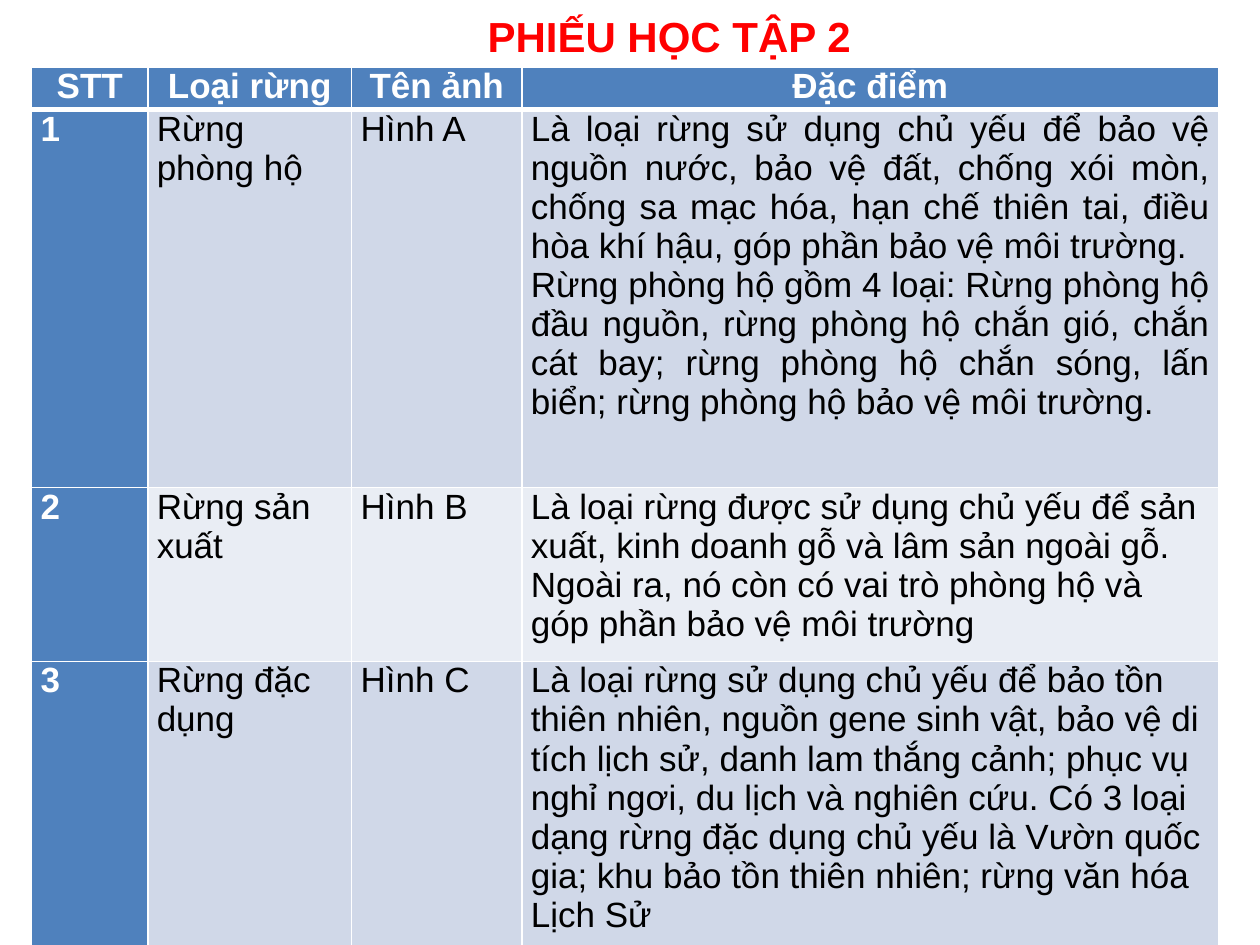
from lxml.etree import SubElement
from pptx import Presentation
from pptx.dml.color import RGBColor
from pptx.enum.text import MSO_ANCHOR, PP_ALIGN
from pptx.oxml.ns import qn
from pptx.util import Cm, Pt

RED = RGBColor(0xFF, 0x00, 0x00)
WHITE = RGBColor(0xFF, 0xFF, 0xFF)
BLACK = RGBColor(0x00, 0x00, 0x00)
BLUE = RGBColor(0x4F, 0x81, 0xBD)
BAND_DARK = RGBColor(0xD0, 0xD8, 0xE8)
BAND_LIGHT = RGBColor(0xE9, 0xED, 0xF4)

COLUMN_WIDTHS = (2.34, 4.11, 3.43, 14.05)
ROW_HEIGHTS = (0.86, 7.62, 3.5, 5.69)
FOREST_ROWS = (
    ("STT", "Loại rừng", "Tên ảnh", "Đặc điểm"),
    ("1", "Rừng phòng hộ", "Hình A",
     "Là loại rừng sử dụng chủ yếu để bảo vệ nguồn nước, bảo vệ đất, "
     "chống xói mòn, chống sa mạc hóa, hạn chế thiên tai, điều hòa khí hậu, "
     "góp phần bảo vệ môi trường.\n"
     "Rừng phòng hộ gồm 4 loại: Rừng phòng hộ đầu nguồn, rừng phòng hộ "
     "chắn gió, chắn cát bay; rừng phòng hộ chắn sóng, lấn biển; "
     "rừng phòng hộ bảo vệ môi trường."),
    ("2", "Rừng sản xuất", "Hình B",
     "Là loại rừng được sử dụng chủ yếu để sản xuất, kinh doanh gỗ và lâm sản "
     "ngoài gỗ. Ngoài ra, nó còn có vai trò phòng hộ và góp phần bảo vệ "
     "môi trường"),
    ("3", "Rừng đặc dụng", "Hình C",
     "Là loại rừng sử dụng chủ yếu để bảo tồn thiên nhiên, nguồn gene sinh vật, "
     "bảo vệ di tích lịch sử, danh lam thắng cảnh; phục vụ nghỉ ngơi, du lịch "
     "và nghiên cứu. Có 3 loại dạng rừng đặc dụng chủ yếu là Vườn quốc gia; "
     "khu bảo tồn thiên nhiên; rừng văn hóa Lịch Sử"),
)


def style_paragraph(para, size, color, bold, align=None):
    """Set the font and alignment of one paragraph."""
    para.font.name = "Arial"
    para.font.size = Pt(size)
    para.font.bold = bold
    para.font.color.rgb = color
    para.alignment = align


def set_borders(cell, **widths):
    """Draw white borders, given in points by side letter."""
    properties = cell._tc.get_or_add_tcPr()
    for side, width in widths.items():
        line = SubElement(properties, qn(f"a:ln{side}"), w=str(Pt(width)))
        fill = SubElement(line, qn("a:solidFill"))
        SubElement(fill, qn("a:srgbClr"), val=str(WHITE))


def add_title(page, left, top, width, height):
    """Add the worksheet title, indented within its box."""
    box = page.shapes.add_textbox(Cm(left), Cm(top), Cm(width), Cm(height))
    frame = box.text_frame
    frame.word_wrap = True
    frame.vertical_anchor = MSO_ANCHOR.MIDDLE
    frame.margin_left = Cm(9.45)
    frame.text = "PHIẾU HỌC TẬP 2"
    style_paragraph(frame.paragraphs[0], 24, RED, True)


def fill_cell(cell, text, row, column):
    """Write and style one cell according to its place in the table."""
    header = row == 0
    strong = header or column == 0
    cell.margin_left = cell.margin_right = Cm(0.18)
    cell.margin_top = cell.margin_bottom = 0
    set_borders(cell, L=1, R=1, T=3 if row == 1 else 1, B=3 if header else 1)
    cell.fill.solid()
    band = BAND_DARK if row % 2 else BAND_LIGHT
    cell.fill.fore_color.rgb = BLUE if strong else band
    cell.text = text
    align = PP_ALIGN.CENTER if header else None
    if (row, column) == (1, 3):
        align = PP_ALIGN.JUSTIFY
    for para in cell.text_frame.paragraphs:
        style_paragraph(para, 20, WHITE if strong else BLACK, strong, align)


def add_forest_table(page, left, top):
    """Add the table of forest types."""
    frame = page.shapes.add_table(
        len(ROW_HEIGHTS), len(COLUMN_WIDTHS), Cm(left), Cm(top),
        Cm(sum(COLUMN_WIDTHS)), Cm(sum(ROW_HEIGHTS)))
    table = frame.table
    table.first_col = True
    for column, width in zip(table.columns, COLUMN_WIDTHS):
        column.width = Cm(width)
    for row, height in zip(table.rows, ROW_HEIGHTS):
        row.height = Cm(height)
    for row, texts in enumerate(FOREST_ROWS):
        for column, text in enumerate(texts):
            fill_cell(table.cell(row, column), text, row, column)


def main():
    """Build the worksheet slide and save it."""
    deck = Presentation()
    deck.slide_width, deck.slide_height = Cm(25.4), Cm(19.05)
    page = deck.slides.add_slide(deck.slide_layouts[6])
    add_title(page, 0.38, 0.08, 24.66, 1.27)
    add_forest_table(page, 0.64, 1.35)
    deck.save("out.pptx")


if __name__ == "__main__":
    main()
